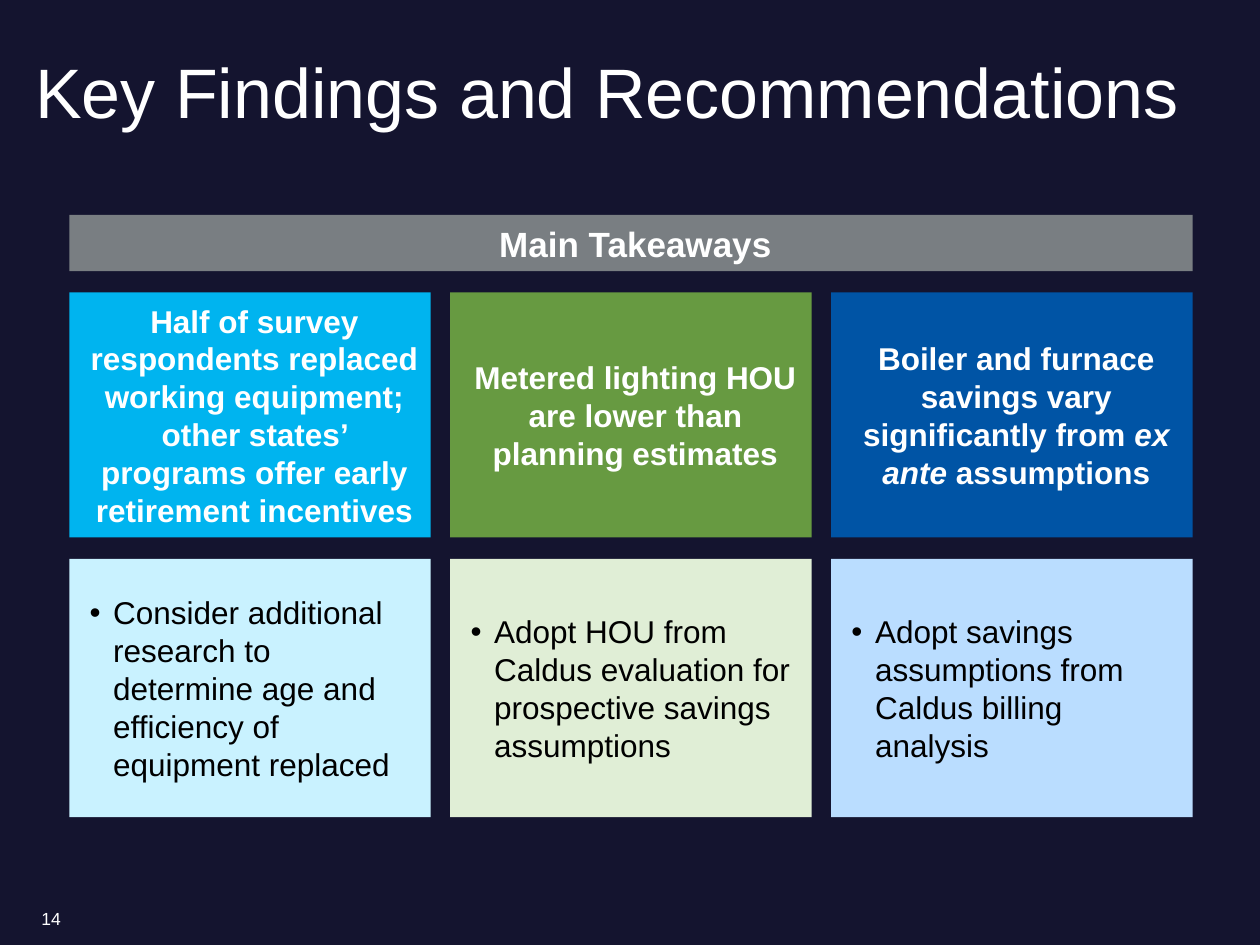
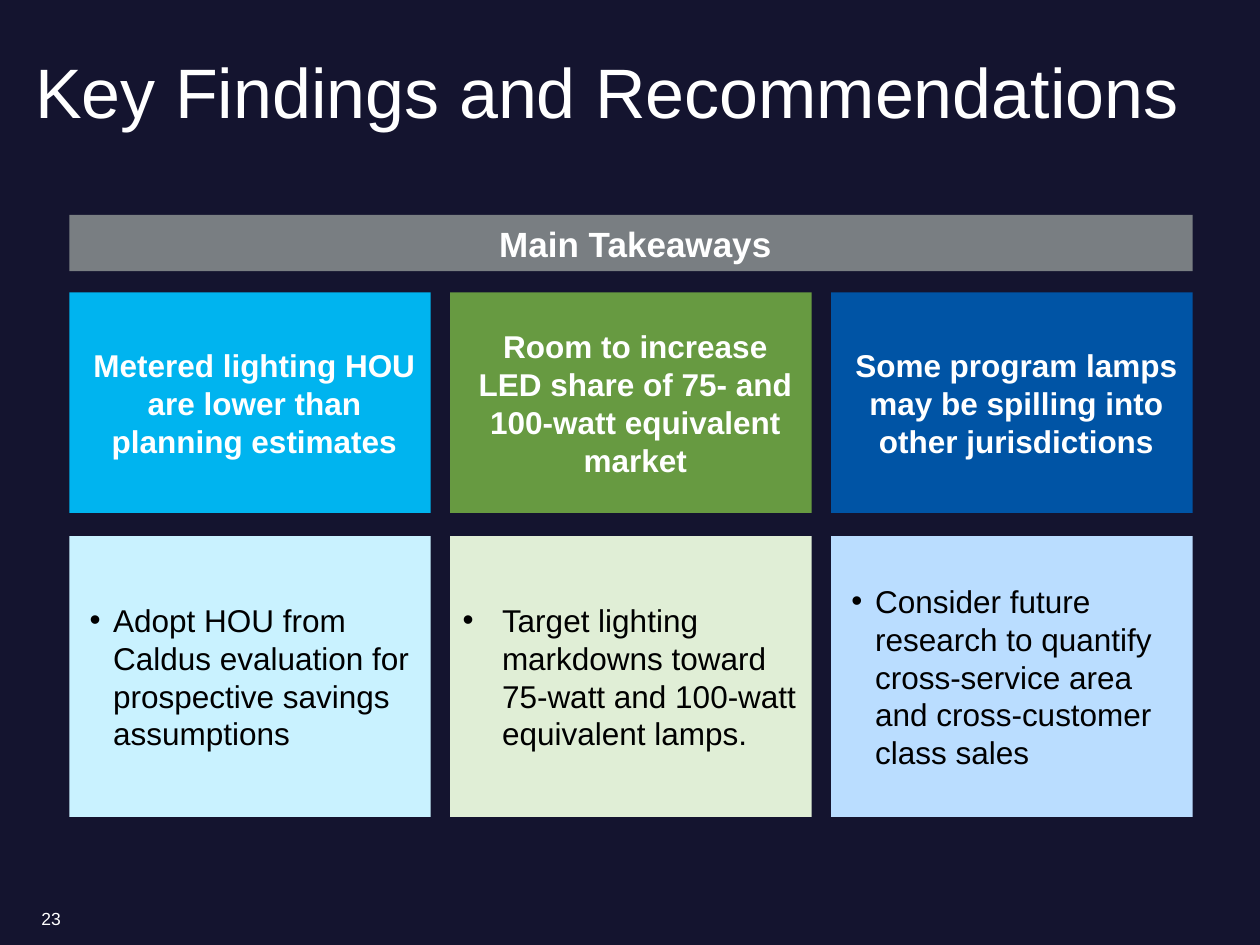
"""Build two slides of key findings and recommendations."""
from dataclasses import dataclass

from lxml.etree import SubElement
from pptx import Presentation
from pptx.dml.color import RGBColor
from pptx.enum.shapes import MSO_SHAPE
from pptx.enum.text import MSO_ANCHOR, MSO_AUTO_SIZE, PP_ALIGN
from pptx.oxml.ns import qn
from pptx.shapes.autoshape import Shape
from pptx.slide import Slide
from pptx.text.text import _Paragraph as Paragraph
from pptx.util import Pt

FONT = "Arial"
NAVY, GRAY, WHITE, BLACK = "14142F", "797E82", "FFFFFF", "000000"
COLUMN_COLORS = (("00B4EF", "C9F2FF"), ("679A41", "E0EED6"), ("0054A5", "BADDFF"))

MARGIN, GRID_WIDTH, COLUMN_WIDTH = 39.6, 642, 206.6
COLUMN_PITCH = (GRID_WIDTH - COLUMN_WIDTH) / 2
BAND_TOP, BAND_HEIGHT = 122.8, 32.2
FINDING_TOP, GRID_BOTTOM = 167.1, 466.9
TITLE_LEFT = 16.6


@dataclass(frozen=True)
class Phrase:
    """A piece of text in one style."""
    text: str
    italic: bool = False


@dataclass(frozen=True)
class Takeaway:
    """A finding and the recommendation drawn from it."""
    finding: tuple[Phrase, ...]
    recommendation: str
    bullet_margin: float = 18
    bullet_hang: float = 13.5


@dataclass(frozen=True)
class Page:
    """The content and row split of one slide."""
    number: str
    finding_height: float
    row_gap: float
    takeaways: tuple[Takeaway, ...]


HOU_FINDING = (Phrase("Metered lighting HOU are lower than planning estimates"),)
HOU_ADVICE = "Adopt HOU from Caldus evaluation for prospective savings assumptions"

PAGES = (
    Page("14", 140, 12.2, (
        Takeaway((Phrase("Half of survey respondents replaced working equipment; "
                         "other states’ programs offer early retirement incentives"),),
                 "Consider additional research to determine age and efficiency "
                 "of equipment replaced"),
        Takeaway(HOU_FINDING, HOU_ADVICE),
        Takeaway((Phrase("Boiler and furnace savings vary significantly from "),
                  Phrase("ex ante ", italic=True), Phrase("assumptions")),
                 "Adopt savings assumptions from Caldus billing analysis"),
    )),
    Page("23", 126, 13.3, (
        Takeaway(HOU_FINDING, HOU_ADVICE),
        Takeaway((Phrase("Room to increase LED share of 75- and 100-watt "
                         "equivalent market"),),
                 "Target lighting markdowns toward 75-watt and 100-watt "
                 "equivalent lamps.", 22.5, 22.5),
        Takeaway((Phrase("Some program lamps may be spilling into other jurisdictions"),),
                 "Consider future research to quantify cross-service area and "
                 "cross-customer class sales"),
    )),
)


def rgb(color: str) -> RGBColor:
    """Turn a hex string into a colour."""
    return RGBColor.from_string(color)


def write(paragraph: Paragraph, phrases: tuple[Phrase, ...], size: float,
          color: str = WHITE, bold: bool = False) -> None:
    """Add the phrases to a paragraph as runs."""
    for phrase in phrases:
        run = paragraph.add_run()
        run.text = phrase.text
        run.font.name, run.font.size = FONT, Pt(size)
        run.font.bold, run.font.italic = bold, phrase.italic
        run.font.color.rgb = rgb(color)


def indent(paragraph: Paragraph, margin: float, hang: float = 0) -> None:
    """Set the left margin and hanging indent of a paragraph."""
    properties = paragraph._p.get_or_add_pPr()
    properties.set("marL", str(Pt(margin)))
    properties.set("indent", str(-Pt(hang)))


def add_panel(slide: Slide, left: float, top: float, width: float,
              height: float, color: str) -> Shape:
    """Draw a flat rectangle ready for text."""
    panel = slide.shapes.add_shape(
        MSO_SHAPE.RECTANGLE, Pt(left), Pt(top), Pt(width), Pt(height))
    panel.shadow.inherit = False
    panel.fill.solid()
    panel.fill.fore_color.rgb = rgb(color)
    panel.line.fill.background()
    panel.text_frame.word_wrap = True
    panel.text_frame.vertical_anchor = MSO_ANCHOR.MIDDLE
    return panel


def add_heading(panel: Shape, phrases: tuple[Phrase, ...], size: float) -> None:
    """Write centred bold text in a panel."""
    heading = panel.text_frame.paragraphs[0]
    heading.alignment = PP_ALIGN.CENTER
    indent(heading, 5)
    write(heading, phrases, size, bold=True)


def add_recommendation(panel: Shape, takeaway: Takeaway) -> None:
    """Write a bulleted recommendation in a panel."""
    advice = panel.text_frame.paragraphs[0]
    advice.alignment = PP_ALIGN.LEFT
    indent(advice, takeaway.bullet_margin, takeaway.bullet_hang)
    properties = advice._p.get_or_add_pPr()
    SubElement(properties, qn("a:buFont")).set("typeface", FONT)
    SubElement(properties, qn("a:buChar")).set("char", "•")
    write(advice, (Phrase(takeaway.recommendation),), 18, BLACK)


def add_title(slide: Slide, text: str) -> None:
    """Place and fill the slide title."""
    title = slide.shapes.title
    title.left, title.top = Pt(TITLE_LEFT), Pt(19.4)
    title.width, title.height = Pt(679.7), Pt(56.9)
    frame = title.text_frame
    frame.auto_size, frame.word_wrap = MSO_AUTO_SIZE.NONE, True
    frame.vertical_anchor = MSO_ANCHOR.BOTTOM
    frame.margin_left, frame.margin_right = Pt(3.6), Pt(7.2)
    frame.margin_top = frame.margin_bottom = 0
    heading = frame.paragraphs[0]
    heading.alignment, heading.line_spacing = PP_ALIGN.LEFT, 0.9
    write(heading, (Phrase(text),), 40)


def add_page_number(slide: Slide, number: str) -> None:
    """Write the page number at the bottom left."""
    footer = slide.shapes.add_textbox(Pt(TITLE_LEFT), Pt(510.5), Pt(216), Pt(28.8))
    footer.text_frame.word_wrap = True
    footer.text_frame.vertical_anchor = MSO_ANCHOR.MIDDLE
    write(footer.text_frame.paragraphs[0], (Phrase(number),), 10)


def add_page(slide: Slide, page: Page) -> None:
    """Draw one slide of takeaways."""
    add_title(slide, "Key Findings and Recommendations")
    add_page_number(slide, page.number)
    band = add_panel(slide, MARGIN, BAND_TOP, GRID_WIDTH, BAND_HEIGHT, GRAY)
    add_heading(band, (Phrase("Main Takeaways"),), 20)
    advice_top = FINDING_TOP + page.finding_height + page.row_gap
    for column, (takeaway, (strong, pale)) in enumerate(zip(page.takeaways, COLUMN_COLORS)):
        left = MARGIN + column * COLUMN_PITCH
        finding = add_panel(slide, left, FINDING_TOP, COLUMN_WIDTH,
                            page.finding_height, strong)
        add_heading(finding, takeaway.finding, 18)
        advice = add_panel(slide, left, advice_top, COLUMN_WIDTH,
                           GRID_BOTTOM - advice_top, pale)
        add_recommendation(advice, takeaway)


def main() -> None:
    """Build and save the presentation."""
    deck = Presentation()
    deck.slide_width, deck.slide_height = Pt(720), Pt(540)
    backdrop = deck.slide_master.background.fill
    backdrop.solid()
    backdrop.fore_color.rgb = rgb(NAVY)
    title_only = deck.slide_layouts.get_by_name("Title Only")
    for page in PAGES:
        add_page(deck.slides.add_slide(title_only), page)
    deck.save("out.pptx")


if __name__ == "__main__":
    main()
